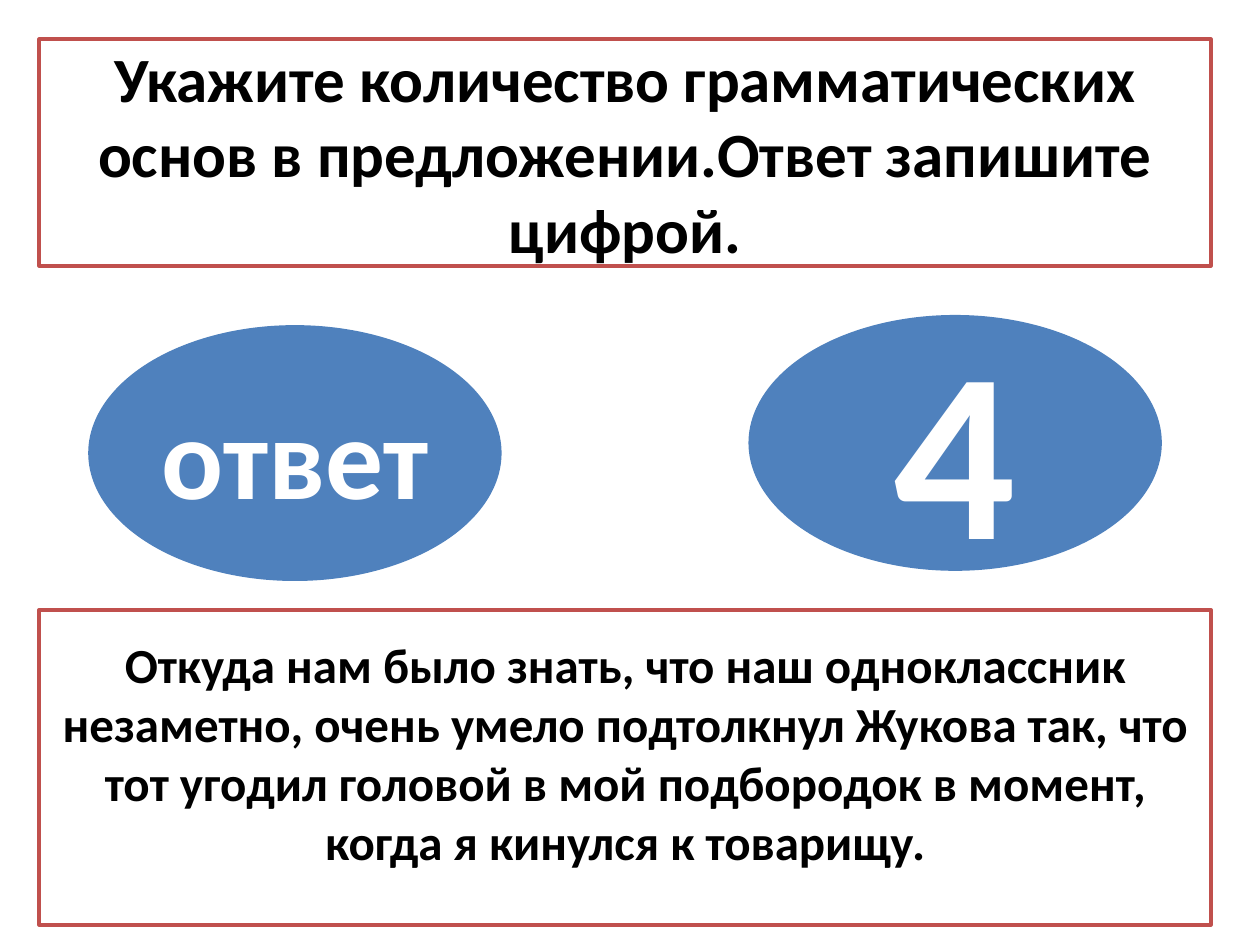
from pptx import Presentation
from pptx.dml.color import RGBColor
from pptx.enum.shapes import MSO_SHAPE
from pptx.enum.text import MSO_ANCHOR, MSO_AUTO_SIZE, PP_ALIGN
from pptx.util import Pt

COLORS = {"paper": "FFFFFF", "ink": "000000", "frame": "C0504D", "oval": "4F81BD"}

# Content
TASK = "Укажите количество грамматических основ в предложении.Ответ запишите цифрой."
SENTENCE = ("Откуда нам было знать, что наш одноклассник незаметно, очень умело "
            "подтолкнул Жукова так, что тот угодил головой в мой подбородок в момент, "
            "когда я кинулся к товарищу.")
OVALS = [("ответ", 66, 50.4, 185.8), ("4", 138, 427.7, 180)]  # text, size, left, top

# Layout in points
FRAME_LEFT, FRAME_W = 22.4, 669.6
TASK_TOP, TASK_H = 22.4, 129.6
SENTENCE_TOP, SENTENCE_H = 348.5, 180
OVAL_W, OVAL_H = 236.2, 146.2


def color(name):
    return RGBColor.from_string(COLORS[name])


def place(sp, left, top, width, height):
    sp.left, sp.top, sp.width, sp.height = Pt(left), Pt(top), Pt(width), Pt(height)


def write(sp, text, size, ink="ink", fill="paper", line=None, top=3.6, bottom=3.6):
    sp.fill.solid()
    sp.fill.fore_color.rgb = color(fill)
    if line:
        sp.line.color.rgb = color(line)
        sp.line.width = Pt(2)
    else:
        sp.line.fill.background()
    tf = sp.text_frame
    tf.word_wrap = True
    tf.auto_size = MSO_AUTO_SIZE.NONE
    tf.vertical_anchor = MSO_ANCHOR.MIDDLE
    tf.margin_top, tf.margin_bottom = Pt(top), Pt(bottom)
    p = tf.paragraphs[0]
    p.alignment = PP_ALIGN.CENTER
    r = p.add_run()
    r.text = text
    r.font.name = "Calibri"
    r.font.size = Pt(size)
    r.font.bold = True
    r.font.color.rgb = color(ink)


def add_shape(slide, kind, *box):
    sp = slide.shapes.add_shape(kind, *map(Pt, box))
    sp.shadow.inherit = False
    return sp


prs = Presentation()
prs.slide_width, prs.slide_height = Pt(720), Pt(540)
slide = prs.slides.add_slide(prs.slide_layouts[5])

# Task in the title
title = slide.shapes.title
place(title, FRAME_LEFT, TASK_TOP, FRAME_W, TASK_H)
write(title, TASK, 36, line="frame")

# Answer ovals
for text, size, left, top in OVALS:
    oval = add_shape(slide, MSO_SHAPE.OVAL, left, top, OVAL_W, OVAL_H)
    write(oval, text, size, ink="paper", fill="oval")

# Sentence to analyse, set slightly above the middle
box = add_shape(slide, MSO_SHAPE.RECTANGLE, FRAME_LEFT, SENTENCE_TOP, FRAME_W, SENTENCE_H)
write(box, SENTENCE, 28, line="frame", top=8.4, bottom=25.6)

prs.save("out.pptx")
